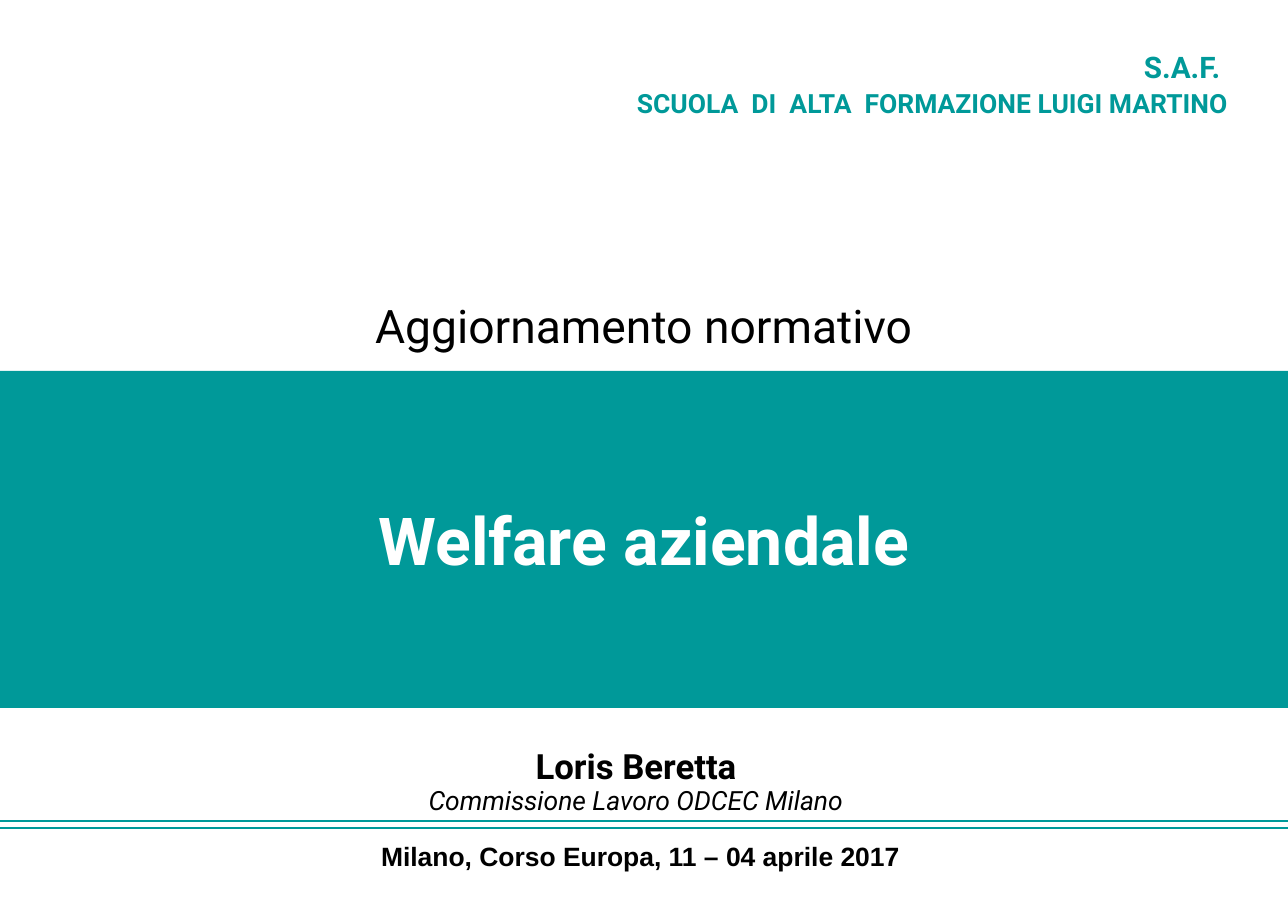
"""Build the opening slide of a seminar on company welfare."""
from dataclasses import dataclass

from lxml import etree
from pptx import Presentation
from pptx import util as u
from pptx.dml.color import RGBColor
from pptx.enum import shapes, text
from pptx.oxml.ns import qn

PX = 914400 / 110.2
WIDTH, HEIGHT = 1288, 910


@dataclass(frozen=True)
class Theme:
    teal: str = "009999"
    white: str = "FFFFFF"
    black: str = "000000"
    body: str = "Roboto"
    footer: str = "Arial"
    title: float = 43.2
    subtitle: float = 30.2
    speaker: float = 22.7
    school: float = 19.4
    small: float = 17.3
    rule: float = 0.75


THEME = Theme()
RIGHT, CENTER = text.PP_ALIGN.RIGHT, text.PP_ALIGN.CENTER
TOP, MIDDLE = text.MSO_ANCHOR.TOP, text.MSO_ANCHOR.MIDDLE

TITLE = dict(
    at=(0, 371, WIDTH, 337), anchor=MIDDLE, align=CENTER, inset=23, spacing=1.0,
    lines=[("Welfare aziendale", THEME.title, THEME.white, THEME.body, True, False)])
TEXTS = [
    dict(at=(506, 38, 734, 87), anchor=TOP, align=RIGHT, inset=12, spacing=1.1,
         lines=[("S.A.F. ", THEME.school, THEME.teal, THEME.body, True, False),
                ("SCUOLA  DI  ALTA  FORMAZIONE LUIGI MARTINO",
                 THEME.small, THEME.teal, THEME.body, True, False)]),
    dict(at=(0, 291, WIDTH, 68), anchor=MIDDLE, align=CENTER, inset=0, spacing=1.0,
         lines=[("Aggiornamento normativo",
                 THEME.subtitle, THEME.black, THEME.body, False, False)]),
    dict(at=(0, 743, 1272, 79), anchor=TOP, align=CENTER, inset=0, spacing=0.9,
         lines=[("Loris Beretta", THEME.speaker, THEME.black, THEME.body, True, False),
                ("Commissione Lavoro ODCEC Milano",
                 THEME.small, THEME.black, THEME.body, False, True)]),
    dict(at=(37, 833, 1207, 44), anchor=TOP, align=CENTER, inset=12, spacing=1.0,
         lines=[("Milano, Corso Europa, 11 – 04 aprile 2017",
                 THEME.small, THEME.black, THEME.footer, True, False)]),
]
RULES = (821, 828)


def px(length):
    return u.Emu(round(length * PX))


def color(value):
    return RGBColor.from_string(value)


def write(box, at, anchor, align, inset, spacing, lines):
    box.left, box.top, box.width, box.height = map(px, at)
    frame = box.text_frame
    frame.word_wrap = True
    frame.auto_size = text.MSO_AUTO_SIZE.NONE
    frame.vertical_anchor = anchor
    frame.margin_left = frame.margin_right = px(inset)
    frame.margin_top = frame.margin_bottom = px(7)
    for index, (words, size, ink, face, bold, italic) in enumerate(lines):
        para = frame.add_paragraph() if index else frame.paragraphs[0]
        para.alignment, para.line_spacing = align, spacing
        para.space_before = para.space_after = u.Pt(0)
        span = para.add_run()
        span.text = words
        font = span.font
        font.name, font.size = face, u.Pt(size)
        font.bold, font.italic = bold, italic
        font.color.rgb = color(ink)


def add_rule(page, y):
    rule = page.shapes.add_connector(
        shapes.MSO_CONNECTOR.STRAIGHT, 0, px(y), px(WIDTH), px(y))
    rule.line.color.rgb = color(THEME.teal)
    rule.line.width = u.Pt(THEME.rule)
    etree.SubElement(rule._element.spPr, qn("a:effectLst"))


def main():
    deck = Presentation()
    deck.slide_width, deck.slide_height = px(WIDTH), px(HEIGHT)
    page = deck.slides.add_slide(deck.slide_layouts[5])
    band = page.shapes.title
    band.fill.solid()
    band.fill.fore_color.rgb = color(THEME.teal)
    write(band, **TITLE)
    for item in TEXTS:
        write(page.shapes.add_textbox(0, 0, 0, 0), **item)
    for y in RULES:
        add_rule(page, y)
    deck.save("out.pptx")


if __name__ == "__main__":
    main()
